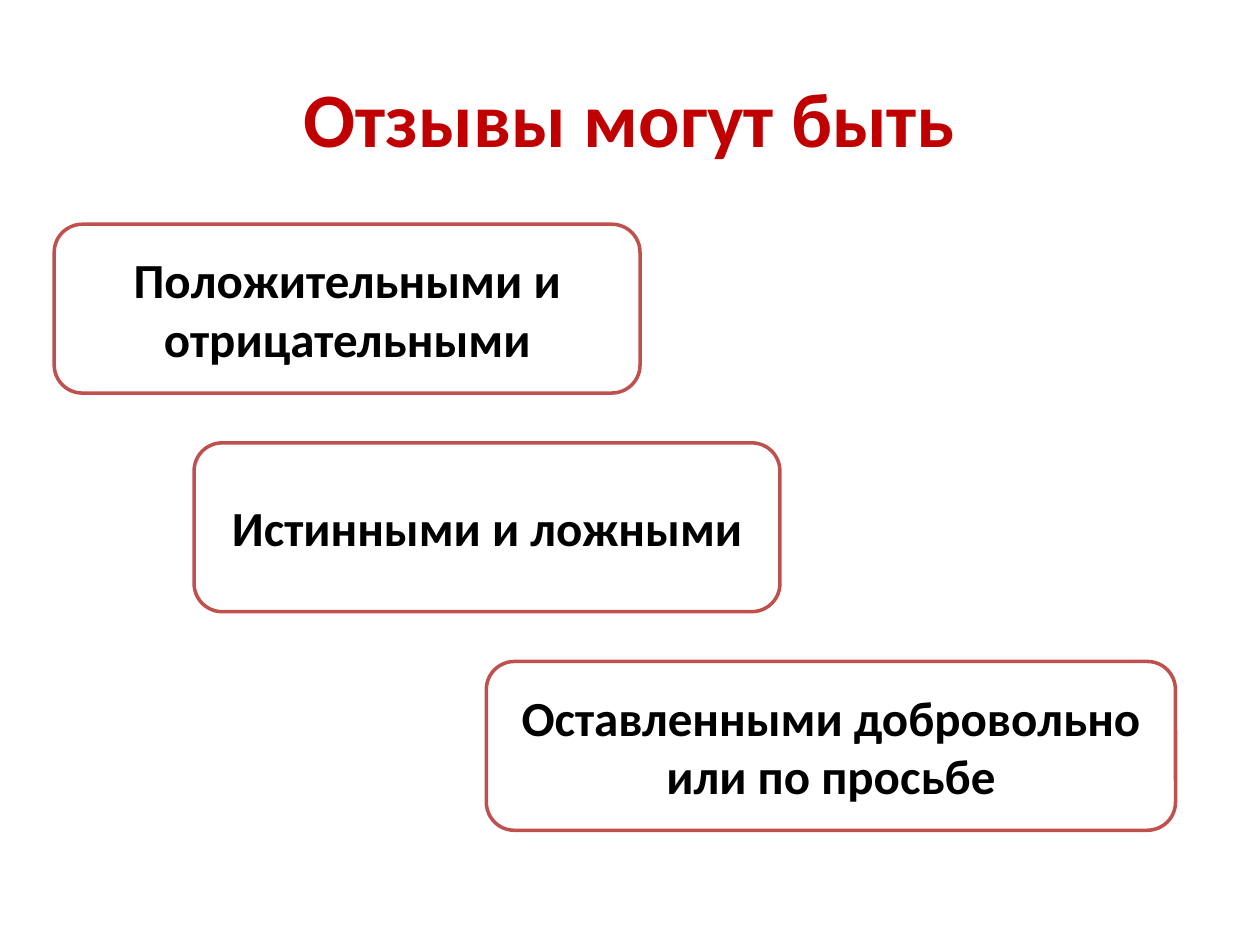
import pptx
import pptx.util
import pptx.dml.color
import pptx.enum.shapes
import pptx.enum.text

SLIDE_W, SLIDE_H = 10, 7.5
FONT = "Calibri"
COLORS = {"title": "C00000", "text": "000000", "card": "FFFFFF", "border": "C0504D"}

# Left edge and width of each card, in inches
CARDS = [
    ("Положительными и отрицательными", 0.43, 4.65),
    ("Истинными и ложными", 1.54, 4.65),
    ("Оставленными добровольно или по просьбе", 3.86, 5.47),
]
CARD_H = 1.34


def rgb(name):
    return pptx.dml.color.RGBColor.from_string(COLORS[name])


def inches(box):
    return [pptx.util.Inches(v) for v in box]


def write_centred(s, text, size, color):
    tf = s.text_frame
    tf.word_wrap = True
    tf.vertical_anchor = pptx.enum.text.MSO_ANCHOR.MIDDLE
    p = tf.paragraphs[0]
    p.alignment = pptx.enum.text.PP_ALIGN.CENTER
    r = p.add_run()
    r.text = text
    r.font.name = FONT
    r.font.size = pptx.util.Pt(size)
    r.font.bold = True
    r.font.color.rgb = rgb(color)


def add_title(slide, box, text):
    write_centred(slide.shapes.add_textbox(*inches(box)), text, 44, "title")


def add_card(slide, box, text):
    s = slide.shapes.add_shape(
        pptx.enum.shapes.MSO_SHAPE.ROUNDED_RECTANGLE, *inches(box))
    s.shadow.inherit = False
    s.fill.solid()
    s.fill.fore_color.rgb = rgb("card")
    s.line.color.rgb = rgb("border")
    s.line.width = pptx.util.Pt(2)
    write_centred(s, text, 28, "text")


def add_staircase(slide, top, height):
    """Spread the cards evenly from top to bottom, each at its own indent."""
    pitch = (height - CARD_H) / (len(CARDS) - 1)
    for row, (text, left, width) in enumerate(CARDS):
        add_card(slide, (left, top + row * pitch, width, CARD_H), text)


def main():
    prs = pptx.Presentation()
    prs.slide_width, prs.slide_height = inches((SLIDE_W, SLIDE_H))
    slide = prs.slides.add_slide(prs.slide_layouts[6])
    add_title(slide, (0.05 * SLIDE_W, 0.04 * SLIDE_H, 0.9 * SLIDE_W, 1.25),
              "Отзывы могут быть")
    add_staircase(slide, 1.78, 4.81)
    prs.save("out.pptx")


if __name__ == "__main__":
    main()
